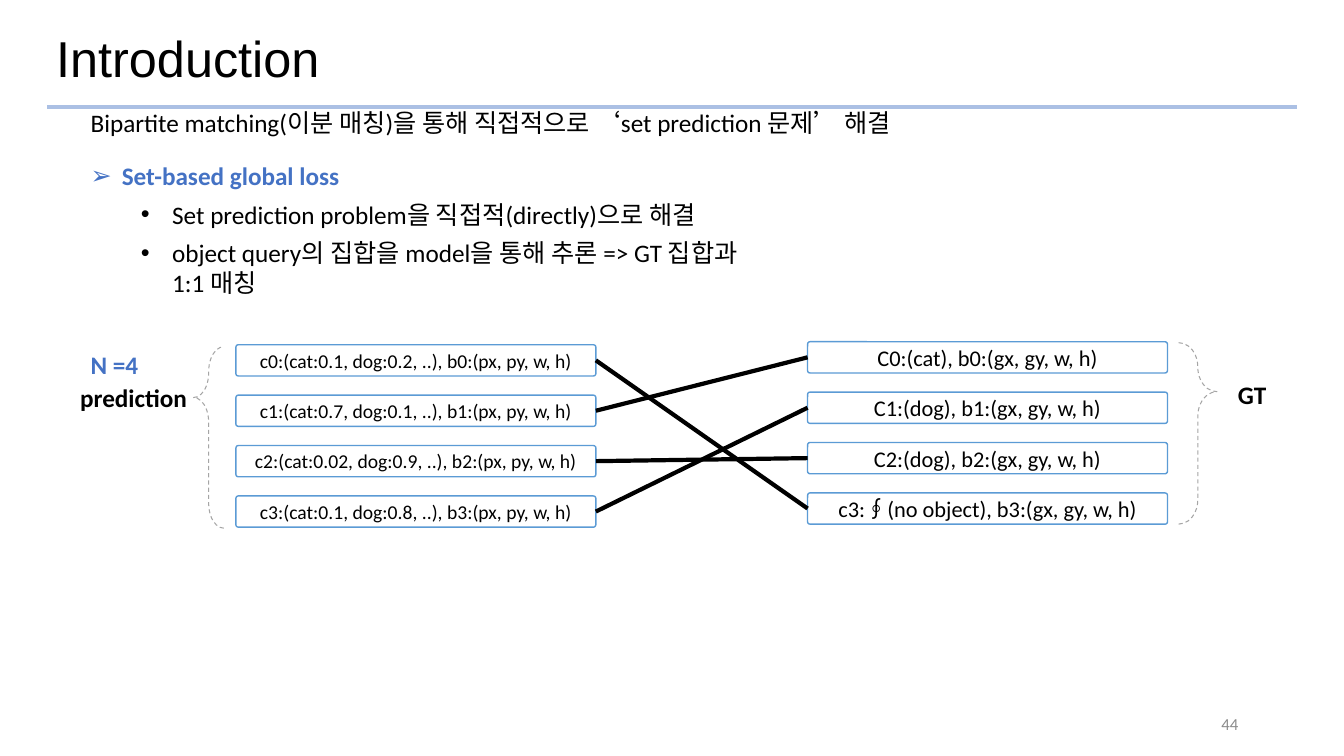
"""Build the slide on set-based global loss and bipartite matching."""
from lxml import etree
from pptx import Presentation
from pptx.dml.color import RGBColor
from pptx.enum import dml, shapes, text
from pptx.oxml import ns
from pptx.util import Inches, Pt

BLACK = RGBColor(0x00, 0x00, 0x00)
WHITE = RGBColor(0xFF, 0xFF, 0xFF)
GRAY = RGBColor(0x8C, 0x8C, 0x8C)
BRACE_GRAY = RGBColor(0xA5, 0xA5, 0xA5)
ACCENT = RGBColor(0x44, 0x72, 0xC4)
BORDER = RGBColor(0x5B, 0x9B, 0xD5)
RULE = RGBColor(0xAB, 0xC0, 0xE4)
KOREAN_FONT = "Noto Sans CJK KR"

PREDICTIONS = [
    "c0:(cat:0.1, dog:0.2, ..), b0:(px, py, w, h)",
    "c1:(cat:0.7, dog:0.1, ..), b1:(px, py, w, h)",
    "c2:(cat:0.02, dog:0.9, ..), b2:(px, py, w, h)",
    "c3:(cat:0.1, dog:0.8, ..), b3:(px, py, w, h)",
]
TRUTHS = [
    ["C0:(cat), b0:(gx, gy, w, h)"],
    ["C1:(dog), b1:(gx, gy, w, h)"],
    ["C2:(dog), b2:(gx, gy, w, h)"],
    ["c3:", "∮", "(no object), b3:(gx, gy, w, h)"],
]
MATCHES = [(1, 0), (2, 2), (0, 3), (3, 1)]


def add_span(para, words, size, color=BLACK, bold=False, font="Calibri"):
    """Append one formatted run to a paragraph."""
    span = para.add_run()
    span.text = words
    span.font.size = Pt(size)
    span.font.name = font
    span.font.bold = bold
    span.font.color.rgb = color
    latin = span.font._element.find(ns.qn("a:latin"))
    east_asian = etree.Element(ns.qn("a:ea"), typeface=KOREAN_FONT)
    latin.addnext(east_asian)


def add_text_box(page, left, top, width, height, anchor=text.MSO_ANCHOR.TOP):
    """Add a wrapping text box and return its text frame."""
    box = page.shapes.add_textbox(Inches(left), Inches(top), Inches(width), Inches(height))
    box.text_frame.word_wrap = True
    box.text_frame.vertical_anchor = anchor
    return box.text_frame


def add_label(page, place, words, size=18, color=BLACK, bold=True,
              align=text.PP_ALIGN.LEFT, anchor=text.MSO_ANCHOR.TOP, font="Calibri"):
    """Add a text box holding one line and return its paragraph."""
    para = add_text_box(page, *place, anchor).paragraphs[0]
    para.alignment = align
    add_span(para, words, size, color, bold, font)
    return para


def add_bullet(para, mark, margin, words, color=BLACK, bold=False):
    """Turn a paragraph into a bullet with a hanging indent."""
    props = para._p.get_or_add_pPr()
    props.set("marL", str(Inches(margin)))
    props.set("indent", str(Inches(-0.31)))
    etree.SubElement(props, ns.qn("a:buFont"), typeface="Arial")
    etree.SubElement(props, ns.qn("a:buChar"), char=mark)
    para.space_after = Pt(6)
    add_span(para, words, 18, color, bold)


def add_line(page, start, end, color):
    """Add a thick straight connector without a shadow."""
    line = page.shapes.add_connector(
        shapes.MSO_CONNECTOR.STRAIGHT, *map(Inches, start), *map(Inches, end))
    line.line.color.rgb = color
    line.line.width = Pt(3)
    etree.SubElement(line._element.spPr, ns.qn("a:effectLst"))
    return line


def add_entry(page, left, top, spans, size):
    """Add one rounded box of a prediction or ground truth set."""
    box = page.shapes.add_shape(
        shapes.MSO_SHAPE.ROUNDED_RECTANGLE,
        Inches(left), Inches(top), Inches(3.57), Inches(0.31))
    box.shadow.inherit = False
    box.adjustments[0] = 0.08
    box.fill.solid()
    box.fill.fore_color.rgb = WHITE
    box.line.color.rgb = BORDER
    box.line.width = Pt(1)
    box.text_frame.word_wrap = True
    box.text_frame.vertical_anchor = text.MSO_ANCHOR.MIDDLE
    para = box.text_frame.paragraphs[0]
    para.alignment = text.PP_ALIGN.CENTER
    for words in spans:
        add_span(para, words, size, font=KOREAN_FONT if words == "∮" else "Calibri")
    return box


def add_brace(page, kind, left, top, width, curve, tip):
    """Add a dashed brace that spans a whole set."""
    brace = page.shapes.add_shape(
        kind, Inches(left), Inches(top), Inches(width), Inches(1.8))
    brace.shadow.inherit = False
    brace.adjustments[0] = curve
    brace.adjustments[1] = tip
    brace.fill.background()
    brace.line.color.rgb = BRACE_GRAY
    brace.line.width = Pt(0.75)
    brace.line.dash_style = dml.MSO_LINE.DASH


def add_matching(page):
    """Draw both sets and the lines that pair their entries."""
    predictions = [add_entry(page, 2.34, 3.42 + 0.5 * row, [words], 14)
                   for row, words in enumerate(PREDICTIONS)]
    truths = [add_entry(page, 8.01, 3.39 + 0.5 * row, spans, 16)
              for row, spans in enumerate(TRUTHS)]
    add_brace(page, shapes.MSO_SHAPE.LEFT_BRACE, 1.92, 3.44, 0.3, 0.82, 0.28)
    add_brace(page, shapes.MSO_SHAPE.RIGHT_BRACE, 11.69, 3.4, 0.38, 0.9, 0.27)
    for guess, truth in MATCHES:
        line = add_line(page, (0, 0), (1, 1), BLACK)
        line.begin_connect(predictions[guess], 3)
        line.end_connect(truths[truth], 1)
    add_label(page, (0.8, 3.42, 1.37, 0.4), "N =4", color=ACCENT)
    add_label(page, (0.64, 3.74, 1.37, 0.4), "prediction", align=text.PP_ALIGN.CENTER)
    add_label(page, (12.18, 3.71, 0.55, 0.4), "GT")


def main():
    """Assemble and save the deck."""
    deck = Presentation()
    deck.slide_width, deck.slide_height = Inches(13.33), Inches(7.5)
    page = deck.slides.add_slide(deck.slide_layouts[6])

    add_line(page, (0.47, 1.06), (12.86, 1.06), RULE)
    title = add_label(page, (0.46, 0.21, 10.86, 0.79), "Introduction", 36, bold=False,
                      anchor=text.MSO_ANCHOR.MIDDLE, font="Arial")
    title.line_spacing = 0.9
    add_label(page, (9.38, 6.98, 3, 0.4), "44", 12, GRAY, False,
              text.PP_ALIGN.RIGHT, text.MSO_ANCHOR.MIDDLE)
    add_label(page, (0.8, 1.02, 12.08, 2.34),
              "Bipartite matching(이분 매칭)을 통해 직접적으로 ‘set prediction 문제’ 해결", bold=False)

    frame = add_text_box(page, 0.8, 1.54, 6.67, 1.48)
    add_bullet(frame.paragraphs[0], "➢", 0.31, "Set-based global loss", ACCENT, True)
    for words in ("Set prediction problem을 직접적(directly)으로 해결",
                  "object query의 집합을 model을 통해 추론 => GT 집합과 1:1 매칭"):
        para = frame.add_paragraph()
        para.level = 1
        add_bullet(para, "•", 0.81, words)

    add_matching(page)
    deck.save("out.pptx")


if __name__ == "__main__":
    main()
